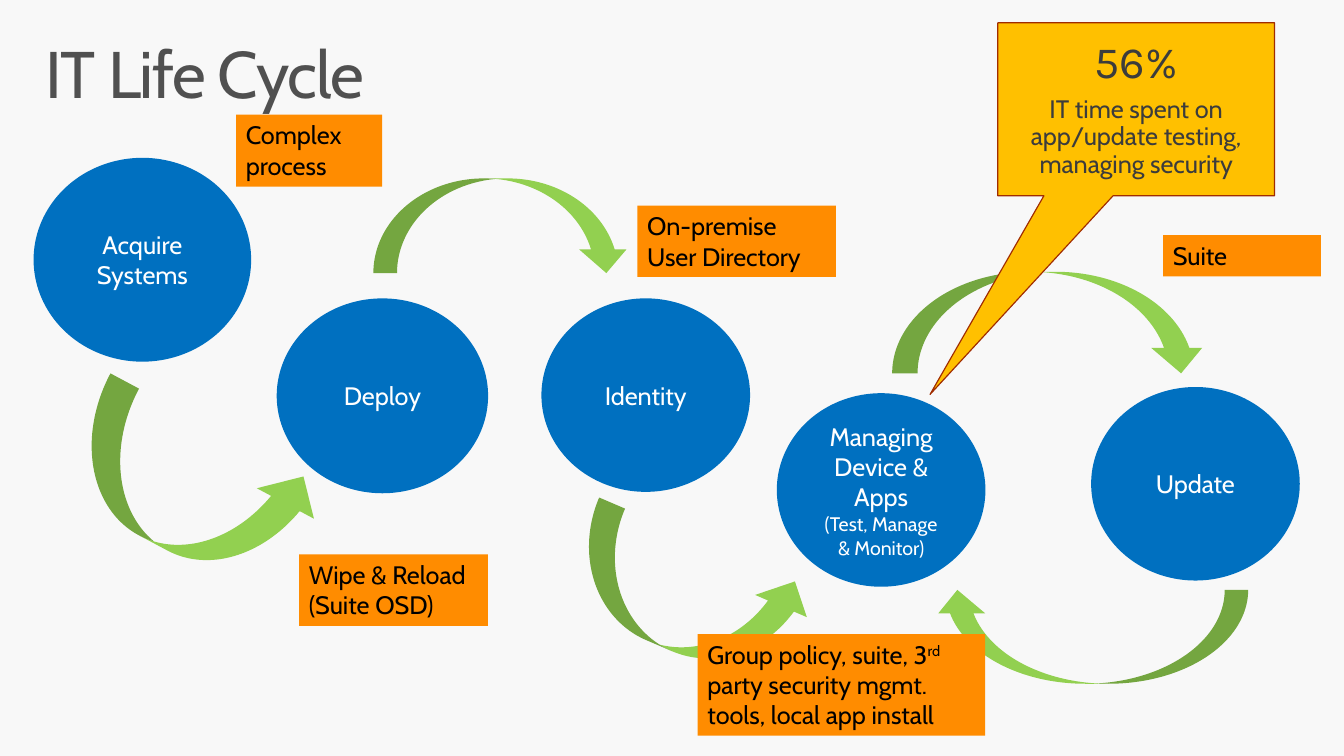
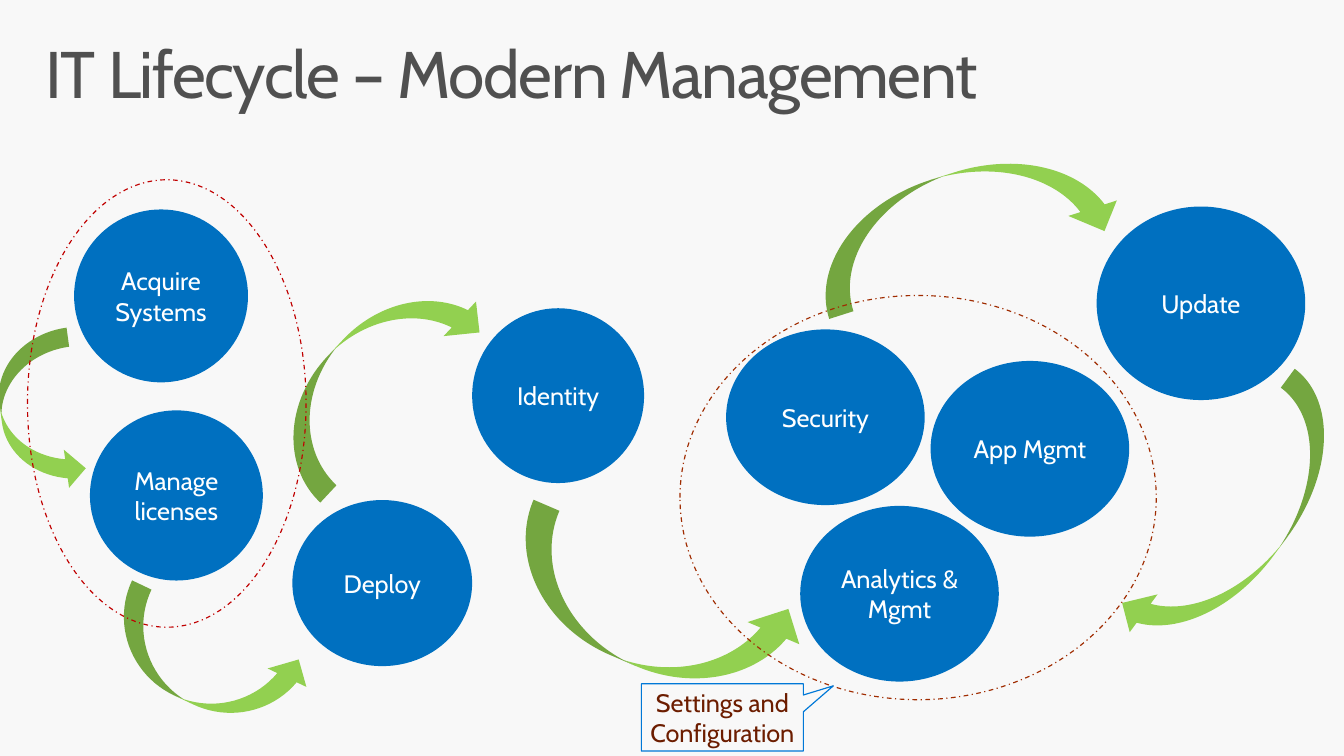
"""Build two slides on the IT life cycle, the current one and modern management."""
from pptx import Presentation
from pptx.dml.color import RGBColor
from pptx.enum.dml import MSO_LINE
from pptx.enum.shapes import MSO_SHAPE
from pptx.enum.text import MSO_ANCHOR, MSO_AUTO_SIZE, PP_ALIGN
from pptx.util import Pt

BLUE, GREEN, ORANGE, AMBER = "0070C0", "92D050", "FF8C00", "FFC000"
WHITE, BLACK, GREY, DARK = "FFFFFF", "000000", "505050", "3C3C3C"
RUST, RED, SKY, BROWN = "A02C01", "C00000", "0078D7", "6C1D00"
DOWN, UP, RIGHT = (MSO_SHAPE.CURVED_DOWN_ARROW, MSO_SHAPE.CURVED_UP_ARROW,
                   MSO_SHAPE.CURVED_RIGHT_ARROW)


def draw(s, kind, box, fill=None, line=None):
    sp = s.shapes.add_shape(kind, *[Pt(v) for v in box])
    sp.shadow.inherit = False
    if fill:
        sp.fill.solid()
        sp.fill.fore_color.rgb = RGBColor.from_string(fill)
    else:
        sp.fill.background()
    if line:
        sp.line.color.rgb = RGBColor.from_string(line)
        sp.line.width = Pt(0.85)
    else:
        sp.line.fill.background()
    return sp


def write(sp, text, color, size=18.4, align=PP_ALIGN.CENTER):
    tf = sp.text_frame
    tf.word_wrap = True
    for i, row in enumerate(text.split("\n")):
        p = tf.paragraphs[0] if i == 0 else tf.add_paragraph()
        p.alignment = align
        p.font.size = Pt(size)
        p.font.name = "Cabin"
        p.font.color.rgb = RGBColor.from_string(color)
        for j, part in enumerate(row.split("|")):
            r = p.add_run()
            r.text = part
            if j % 2:
                r._r.get_or_add_rPr().set("baseline", "30000")
    return tf


prs = Presentation()
prs.slide_width, prs.slide_height = Pt(979.2), Pt(550.8)
bg = prs.slide_master.background.fill
bg.solid()
bg.fore_color.rgb = RGBColor.from_string("F8F8F8")

pages = [
    ("IT Life Cycle",
     [("Acquire Systems", 24.5, 115, 158.5, 148.5),
      ("Deploy", 201.6, 217.4, 154, 142),
      ("Identity", 394.5, 217.4, 152, 141),
      ("Managing Device & Apps\n(Test, Manage & Monitor)", 566, 286.5, 152, 141),
      ("Update", 795, 282, 152, 141)],
     [(DOWN, 47.5, 309.6, 183, 94.3, 28.1, "v"),
      (DOWN, 272, 130, 187, 69, 0, ""),
      (UP, 413.3, 393.8, 175.7, 82, 23.2, ""),
      (DOWN, 650, 198, 229, 74, 0, ""),
      (DOWN, 680.4, 429.8, 229, 68.4, 0, "hv")]),
    ("IT Lifecycle – Modern Management",
     [("Acquire Systems", 54, 152.6, 126.7, 126),
      ("Manage licenses", 65.5, 299, 126, 124),
      ("Deploy", 213, 364.3, 131, 121),
      ("Identity", 344, 224.6, 125.3, 127.4),
      ("Security", 529, 240, 144.7, 128),
      ("App Mgmt", 678, 263, 144.7, 128),
      ("Analytics & Mgmt", 583, 368.6, 144.7, 128),
      ("Update", 799, 150.5, 152, 141)],
     [(DOWN, 75.6, 452, 150, 62.6, 25.4, "v"),
      (DOWN, 178.6, 239.8, 187, 69, 313.1, ""),
      (UP, 363.6, 404.6, 222.5, 82, 23.2, ""),
      (DOWN, 587.5, 125.3, 229, 74, 342.3, ""),
      (DOWN, 788.4, 347, 229, 68.4, 306.4, "hv"),
      (RIGHT, 0.7, 242, 56, 117.4, 352.2, "")]),
]
slides = []
for title, circles, arrows in pages:
    s = prs.slides.add_slide(prs.slide_layouts[6])
    slides.append(s)
    sp = s.shapes.add_textbox(Pt(21.6), Pt(23), Pt(936), Pt(72))
    tf = write(sp, title, GREY, 48, PP_ALIGN.LEFT)
    tf.margin_left = tf.margin_right = Pt(11.5)
    tf.margin_top = tf.margin_bottom = Pt(7.2)
    p = tf.paragraphs[0]
    p.line_spacing = 0.9
    p.runs[0]._r.get_or_add_rPr().set("spc", "-100")
    for text, *box in circles:
        tf = write(draw(s, MSO_SHAPE.OVAL, box, BLUE), text, WHITE)
        for p in tf.paragraphs[1:]:
            p.font.size = Pt(14.3)
    for kind, x, y, w, h, angle, flips in arrows:
        sp = draw(s, kind, (x, y, w, h), GREEN)
        sp.rotation = angle
        for axis in flips:
            sp._element.spPr.xfrm.set("flip" + axis.upper(), "1")

current, modern = slides

labels = [
    ("Complex process", 172, 83.5, 106.5, 52.5),
    ("Wipe & Reload\n(Suite OSD)", 218, 404, 137.5, 52),
    ("On-premise User Directory", 464.4, 149.8, 144.7, 52),
    ("Group policy, suite, 3|rd| party security mgmt. tools, local app install",
     508.3, 462, 209.5, 74),
    ("Suite", 847.4, 171.4, 115, 30),
]
for text, *box in labels:
    sp = draw(current, MSO_SHAPE.RECTANGLE, box, ORANGE)
    tf = write(sp, text, BLACK, align=PP_ALIGN.LEFT)
    tf.vertical_anchor = MSO_ANCHOR.TOP
    tf.auto_size = MSO_AUTO_SIZE.SHAPE_TO_FIT_TEXT

sp = draw(current, MSO_SHAPE.RECTANGULAR_CALLOUT, (727, 16.6, 201.6, 126), AMBER, RUST)
sp.adjustments[0], sp.adjustments[1] = -0.745, 1.649
tf = write(sp, "56%\nIT time spent on app/update testing, managing security", DARK)
for p in tf.paragraphs:
    p.line_spacing = 0.9
    p.space_after = Pt(6.1)
p = tf.paragraphs[0]
p.font.size = Pt(32.6)
p.font.name = "Karla"

for color, *box in [(RUST, 495.4, 215.3, 347, 294.5), (RED, 20, 131, 203, 326)]:
    sp = draw(modern, MSO_SHAPE.OVAL, box, line=color)
    sp.line.dash_style = MSO_LINE.DASH_DOT

sp = draw(modern, MSO_SHAPE.RECTANGULAR_CALLOUT, (467.3, 498.2, 118, 49), line=SKY)
sp.adjustments[0], sp.adjustments[1] = 0.685, -0.469
tf = write(sp, "Settings and Configuration", BROWN)
tf.margin_left = tf.margin_right = 0

prs.save("out.pptx")
